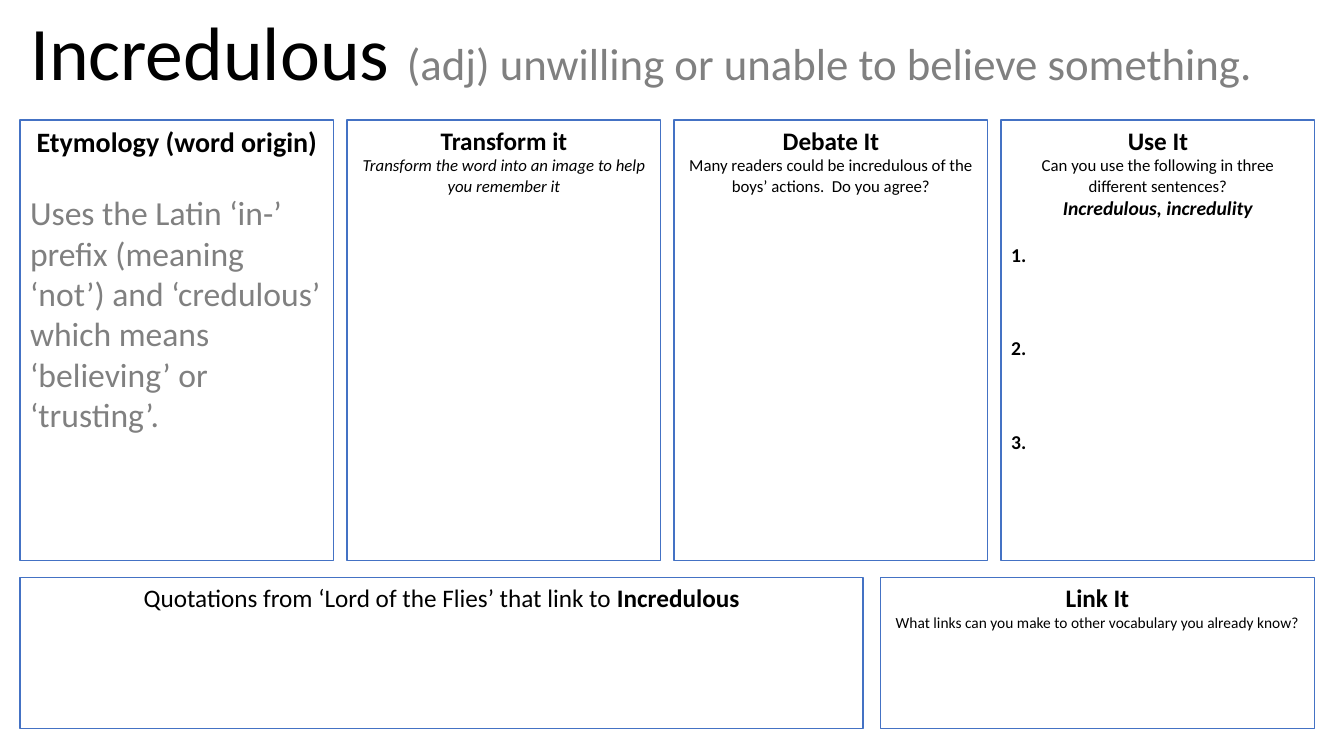
"""Build a vocabulary worksheet slide for the word Incredulous."""
from lxml import etree
from pptx import Presentation, util as u
from pptx.dml.color import RGBColor
from pptx.enum import shapes, text
from pptx.oxml.ns import qn

THEME = {
    "font": "Calibri",
    "ink": RGBColor(0, 0, 0),
    "muted": RGBColor(0x80, 0x80, 0x80),
    "paper": RGBColor(0xFF, 0xFF, 0xFF),
    "border": RGBColor(0x44, 0x72, 0xC4),
    "word": 54, "definition": 32, "origin": 24, "wide_heading": 20,
    "heading": 18, "key_words": 14, "prompt": 12, "small_prompt": 11,
}
LEFT, RIGHT, COLUMNS = 0.2, 13.04, 4
COLUMN_WIDTH = 3.11
PITCH = (RIGHT - LEFT - COLUMN_WIDTH) / (COLUMNS - 1)
TOP, TOP_HEIGHT = 1.19, 4.37
BOTTOM, BOTTOM_HEIGHT = 5.73, 1.5
QUOTATIONS_WIDTH, LINK_WIDTH = 8.36, 4.31
NUMBER_INDENT = 0.38

presentation = Presentation()
presentation.slide_width, presentation.slide_height = u.Inches(13.33), u.Inches(7.5)
slide = presentation.slides.add_slide(presentation.slide_layouts[6])


def style(font, size, color="ink", bold=False, italic=False):
    font.name, font.size, font.color.rgb = THEME["font"], u.Pt(THEME[size]), THEME[color]
    font.bold, font.italic = bold, italic


def add_panel(left, top, width, height, lines):
    panel = slide.shapes.add_shape(
        shapes.MSO_SHAPE.RECTANGLE, *(u.Inches(length) for length in (left, top, width, height)))
    panel.shadow.inherit = False
    panel.fill.solid()
    panel.fill.fore_color.rgb = THEME["paper"]
    panel.line.color.rgb, panel.line.width = THEME["border"], u.Pt(1)
    frame = panel.text_frame
    frame.word_wrap, frame.vertical_anchor = True, text.MSO_ANCHOR.TOP
    for index, (wording, *look) in enumerate(lines):
        paragraph = frame.add_paragraph() if index else frame.paragraphs[0]
        paragraph.text, paragraph.alignment = wording, text.PP_ALIGN.CENTER
        style(paragraph.font, *look)
    return frame


title = slide.shapes.add_textbox(
    u.Inches(LEFT), 0, presentation.slide_width - u.Inches(LEFT), u.Inches(1.01))
title.text_frame.word_wrap = True
for wording, size, color in [
    ("Incredulous ", "word", "ink"),
    ("(adj) unwilling or unable to believe something.", "definition", "muted"),
]:
    run = title.text_frame.paragraphs[0].add_run()
    run.text = wording
    style(run.font, size, color)

columns = [
    [("Etymology (word origin)", "wide_heading", "ink", True),
     ("Uses the Latin ‘in-’ prefix (meaning ‘not’) and ‘credulous’ which means "
      "‘believing’ or ‘trusting’.", "origin", "muted")],
    [("Transform it", "heading", "ink", True),
     ("Transform the word into an image to help you remember it", "prompt", "ink", False, True)],
    [("Debate It", "heading", "ink", True),
     ("Many readers could be incredulous of the boys’ actions.  Do you agree?", "prompt")],
    [("Use It", "heading", "ink", True),
     ("Can you use the following in three different sentences?", "prompt"),
     ("Incredulous, incredulity", "key_words", "ink", True, True)],
]
etymology, transform, debate, use = [
    add_panel(LEFT + column * PITCH, TOP, COLUMN_WIDTH, TOP_HEIGHT, lines)
    for column, lines in enumerate(columns)
]
origin = etymology.paragraphs[1]
origin.alignment, origin.space_before = text.PP_ALIGN.LEFT, u.Pt(24)

for gap in (17, 50, 50):
    sentence = use.add_paragraph()
    sentence.text = " "
    properties = sentence._p.get_or_add_pPr()
    properties.set("marL", str(u.Inches(NUMBER_INDENT)))
    properties.set("indent", str(-u.Inches(NUMBER_INDENT)))
    etree.SubElement(properties, qn("a:buFont"), typeface="+mj-lt")
    etree.SubElement(properties, qn("a:buAutoNum"), type="arabicPeriod")
    sentence.alignment, sentence.space_before = text.PP_ALIGN.LEFT, u.Pt(gap)
    style(sentence.font, "key_words", bold=True)

quotations = add_panel(LEFT, BOTTOM, QUOTATIONS_WIDTH, BOTTOM_HEIGHT, [
    ("Quotations from ‘Lord of the Flies’ that link to ", "heading")])
target = quotations.paragraphs[0].add_run()
target.text = "Incredulous"
target.font.bold = True

add_panel(RIGHT - LINK_WIDTH, BOTTOM, LINK_WIDTH, BOTTOM_HEIGHT, [
    ("Link It", "heading", "ink", True),
    ("What links can you make to other vocabulary you already know?", "small_prompt")])

presentation.save("out.pptx")
